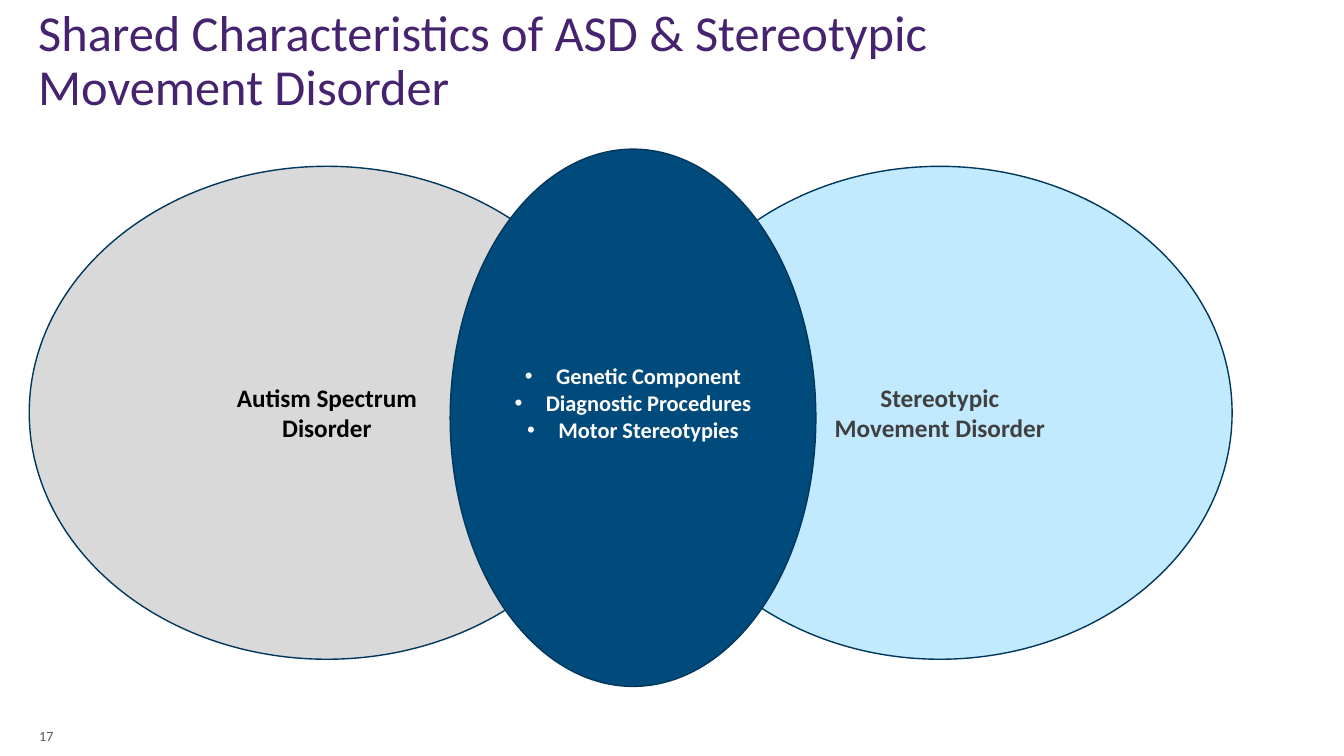
from lxml import etree
from pptx import Presentation
from pptx.dml.color import RGBColor
from pptx.enum.shapes import MSO_SHAPE
from pptx.enum.text import MSO_ANCHOR, PP_ALIGN
from pptx.oxml.ns import qn
from pptx.util import Inches, Pt

OVAL = MSO_SHAPE.OVAL
MIDDLE, BOTTOM = MSO_ANCHOR.MIDDLE, MSO_ANCHOR.BOTTOM
LEFT, CENTER = PP_ALIGN.LEFT, PP_ALIGN.CENTER

FONT = "Calibri"
PURPLE = RGBColor(0x45, 0x23, 0x6E)
NAVY = RGBColor(0x00, 0x37, 0x5C)
BLUE = RGBColor(0x00, 0x4A, 0x7C)
SKY = RGBColor(0xC2, 0xEA, 0xFF)
LIGHT_GRAY = RGBColor(0xD9, 0xD9, 0xD9)
MID_GRAY = RGBColor(0x59, 0x59, 0x59)
DARK_GRAY = RGBColor(0x40, 0x40, 0x40)
BLACK = RGBColor(0x00, 0x00, 0x00)
WHITE = RGBColor(0xFF, 0xFF, 0xFF)

SLIDE_W, SLIDE_H = 13.33, 7.5
INDENT = Inches(0.31)


def add_bullet(p):
    pPr = p._p.get_or_add_pPr()
    pPr.set("marL", str(INDENT))
    pPr.set("indent", str(-INDENT))
    etree.SubElement(pPr, qn("a:buFont")).set("typeface", "Arial")
    etree.SubElement(pPr, qn("a:buChar")).set("char", "•")


def write_lines(tf, lines, size, color, align=LEFT, anchor=MIDDLE,
                bold=False, bullets=False, spacing=None):
    tf.word_wrap = True
    tf.vertical_anchor = anchor
    tf.text = "\n".join(lines)
    for p in tf.paragraphs:
        p.alignment = align
        if spacing:
            p.line_spacing = spacing
        if bullets:
            add_bullet(p)
        for r in p.runs:
            r.font.name = FONT
            r.font.size = Pt(size)
            r.font.bold = bold
            r.font.color.rgb = color


def add_text(s, box, lines, size, color, **style):
    tb = s.shapes.add_textbox(*map(Inches, box))
    write_lines(tb.text_frame, lines, size, color, **style)


def add_oval(s, box, fill, lines, size, color, bullets=False):
    sp = s.shapes.add_shape(OVAL, *map(Inches, box))
    sp.shadow.inherit = False
    sp.fill.solid()
    sp.fill.fore_color.rgb = fill
    sp.line.color.rgb = NAVY
    sp.line.width = Pt(1)
    write_lines(sp.text_frame, lines, size, color, align=CENTER,
                bold=True, bullets=bullets)
    return sp


def add_venn(s, box):
    """Two side ovals inset vertically, with the shared oval on top."""
    x, y, w, h = box
    side_y, side_h = y + 0.17, 4.89
    left_w, right_w, shared_w = 0.495 * w, 0.486 * w, 0.304 * w

    add_oval(s, (x, side_y, left_w, side_h), LIGHT_GRAY,
             ["Autism Spectrum", "Disorder"], 18, BLACK)
    add_oval(s, (x + w - right_w, side_y, right_w, side_h), SKY,
             ["Stereotypic", "Movement Disorder"], 18, DARK_GRAY)
    shared = add_oval(s, (x + 0.35 * w, y, shared_w, h), BLUE,
                      ["Genetic Component", "Diagnostic Procedures",
                       "Motor Stereotypies"], 16, WHITE, bullets=True)
    # Raise the list slightly above the centre
    shared.text_frame.margin_bottom = Inches(0.35)


def main():
    prs = Presentation()
    prs.slide_width, prs.slide_height = Inches(SLIDE_W), Inches(SLIDE_H)
    s = prs.slides.add_slide(prs.slide_layouts[6])

    # Title
    add_text(s, (0.28, 0.05, 9.38, 1.13),
             ["Shared Characteristics of ASD & Stereotypic Movement Disorder"],
             36, PURPLE, spacing=0.9)
    # Slide number
    add_text(s, (0.29, 7.03, 0.59, 0.4), ["17"], 10, MID_GRAY, anchor=BOTTOM)
    # Venn diagram
    add_venn(s, (0.29, 1.48, 11.93, 5.33))

    prs.save("out.pptx")


if __name__ == "__main__":
    main()
